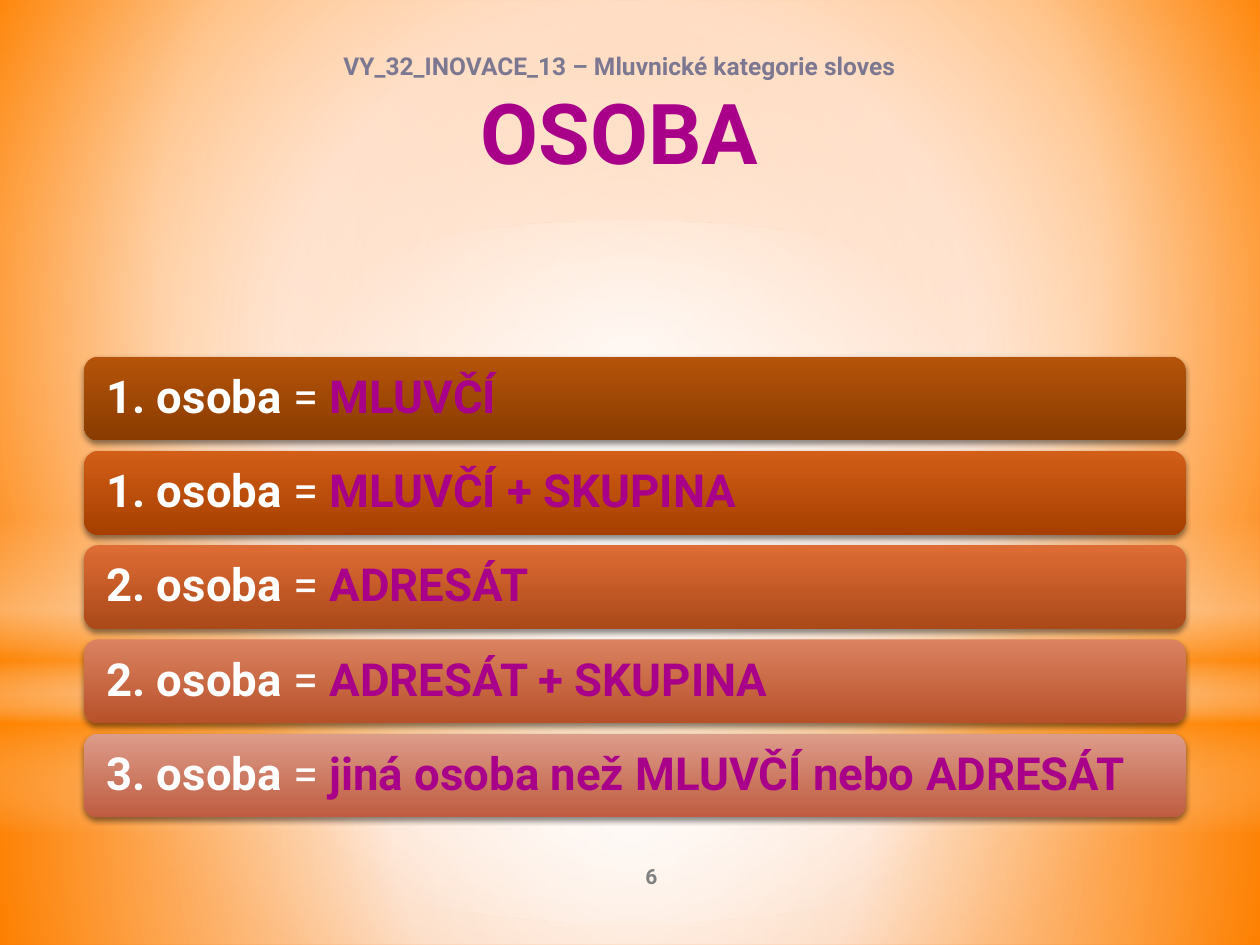
from lxml.etree import SubElement
from pptx import Presentation
from pptx.dml.color import RGBColor
from pptx.enum.shapes import MSO_SHAPE
from pptx.enum.text import MSO_ANCHOR, PP_ALIGN
from pptx.oxml.ns import qn
from pptx.util import Cm, Pt

COLORS = {
    "white": "FFFFFF", "orange": "FF8600", "black": "000000",
    "heading": "7C7891", "accent": "A80088", "number": "808080",
}
WIDTH, HEIGHT = 25.4, 19.05
CENTER = (50, 50, 50, 50)


class SlideBuilder:
    font = {"name": "Roboto", "bold": True}

    def __init__(self, prs):
        self.s = prs.slides.add_slide(prs.slide_layouts[6])

    def gradient(self, owner, stops, focus=None):
        """Fill with (position, colour, opacity) stops: radial with a focus, else downward."""
        fill = owner.fill if hasattr(owner, "fill") else owner.background.fill
        fill.solid()
        solid = owner.element.find(".//" + qn("a:solidFill"))
        grad = solid.makeelement(qn("a:gradFill"), {"rotWithShape": "1"})
        solid.getparent().replace(solid, grad)
        gs_list = SubElement(grad, qn("a:gsLst"))
        for pos, color, opacity in stops:
            gs = SubElement(gs_list, qn("a:gs"), pos=str(pos * 1000))
            clr = SubElement(gs, qn("a:srgbClr"), val=COLORS.get(color, color))
            if opacity < 100:
                SubElement(clr, qn("a:alpha"), val=str(opacity * 1000))
        if focus:
            radial = SubElement(grad, qn("a:path"), path="circle")
            sides = {k: str(v * 1000) for k, v in zip("ltrb", focus)}
            SubElement(radial, qn("a:fillToRect"), sides)
        else:
            SubElement(grad, qn("a:lin"), ang="5400000", scaled="0")

    def shape(self, kind, box, stops, focus=None):
        sp = self.s.shapes.add_shape(kind, *map(Cm, box))
        sp.shadow.inherit = False
        sp.line.fill.background()
        self.gradient(sp, stops, focus)
        return sp

    def shadow(self, sp):
        effects = sp.element.spPr.find(qn("a:effectLst"))
        outer = SubElement(effects, qn("a:outerShdw"), blurRad=str(Pt(3.1)),
                           dist=str(Pt(1.8)), dir="5400000", rotWithShape="0")
        clr = SubElement(outer, qn("a:srgbClr"), val=COLORS["black"])
        SubElement(clr, qn("a:alpha"), val="45000")

    def run(self, p, text, color, **fmt):
        r = p.add_run()
        r.text = text
        for key, value in {**self.font, **fmt}.items():
            setattr(r.font, key, value)
        r.font.color.rgb = RGBColor.from_string(COLORS[color])

    def text(self, box, anchor):
        tf = self.s.shapes.add_textbox(*map(Cm, box)).text_frame
        tf.word_wrap = True
        tf.vertical_anchor = anchor
        p = tf.paragraphs[0]
        p.alignment = PP_ALIGN.CENTER
        return p

    def bar(self, box, top_color, bottom_color, label, meaning):
        sp = self.shape(MSO_SHAPE.ROUNDED_RECTANGLE, box,
                        [(0, top_color, 100), (100, bottom_color, 100)])
        self.shadow(sp)
        tf = sp.text_frame
        frame = {"word_wrap": True, "vertical_anchor": MSO_ANCHOR.MIDDLE}
        for side in ("left", "top", "right", "bottom"):
            frame["margin_" + side] = Cm(0.36)
        for key, value in frame.items():
            setattr(tf, key, value)
        p = tf.paragraphs[0]
        p.alignment = PP_ALIGN.LEFT
        p.line_spacing = 0.9
        self.run(p, label, "white", size=Pt(26))
        self.run(p, " = ", "white", size=Pt(26), bold=False)
        self.run(p, meaning, "accent", size=Pt(26))


def main():
    prs = Presentation()
    prs.slide_width, prs.slide_height = Cm(WIDTH), Cm(HEIGHT)
    b = SlideBuilder(prs)

    # Background glow
    b.gradient(b.s, [(0, "FF8221", 100), (60, "FFCAA7", 100), (100, "F86900", 100)],
               (20, 10, 20, 60))
    horizon = 14.17
    b.shape(MSO_SHAPE.RECTANGLE, (0, horizon, WIDTH, HEIGHT - horizon),
            [(0, "white", 91), (37, "white", 76), (100, "orange", 79)], CENTER)
    b.shape(MSO_SHAPE.RECTANGLE, (0, 0, WIDTH, horizon),
            [(0, "white", 89), (48, "white", 62), (100, "orange", 79)], CENTER)
    b.shape(MSO_SHAPE.RECTANGLE, (0, 10.46, WIDTH, 6.35),
            [(0, "white", 0), (29, "white", 30), (45, "orange", 40),
             (55, "white", 26), (65, "orange", 60), (100, "white", 0)])
    b.shape(MSO_SHAPE.OVAL, (0, 4.45, WIDTH, horizon),
            [(0, "white", 100), (56, "white", 0)], CENTER)

    # Title
    p = b.text((1.9, 0.91, 21.18, 4.19), MSO_ANCHOR.TOP)
    b.run(p, "VY_32_INOVACE_13 – Mluvnické kategorie sloves", "heading", size=Pt(14))
    p.add_line_break()
    b.run(p, "OSOBA", "accent", size=Pt(48))

    # Grammatical persons
    persons = [
        ("B5540A", "893B00", "1. osoba", "MLUVČÍ"),
        ("D25E17", "A63F00", "1. osoba", "MLUVČÍ + SKUPINA"),
        ("DE6C35", "AB4919", "2. osoba", "ADRESÁT"),
        ("DB8260", "B7512A", "2. osoba", "ADRESÁT + SKUPINA"),
        ("DC9C8A", "BF5C40", "3. osoba", "jiná osoba než MLUVČÍ nebo ADRESÁT"),
    ]
    for i, person in enumerate(persons):
        b.bar((1.7, 7.19 + 1.9 * i, 22.2, 1.69), *person)

    # Slide number
    p = b.text((10.59, 17.15, 5.08, 1.02), MSO_ANCHOR.MIDDLE)
    b.run(p, "6", "number", size=Pt(12))

    prs.save("out.pptx")


if __name__ == "__main__":
    main()
